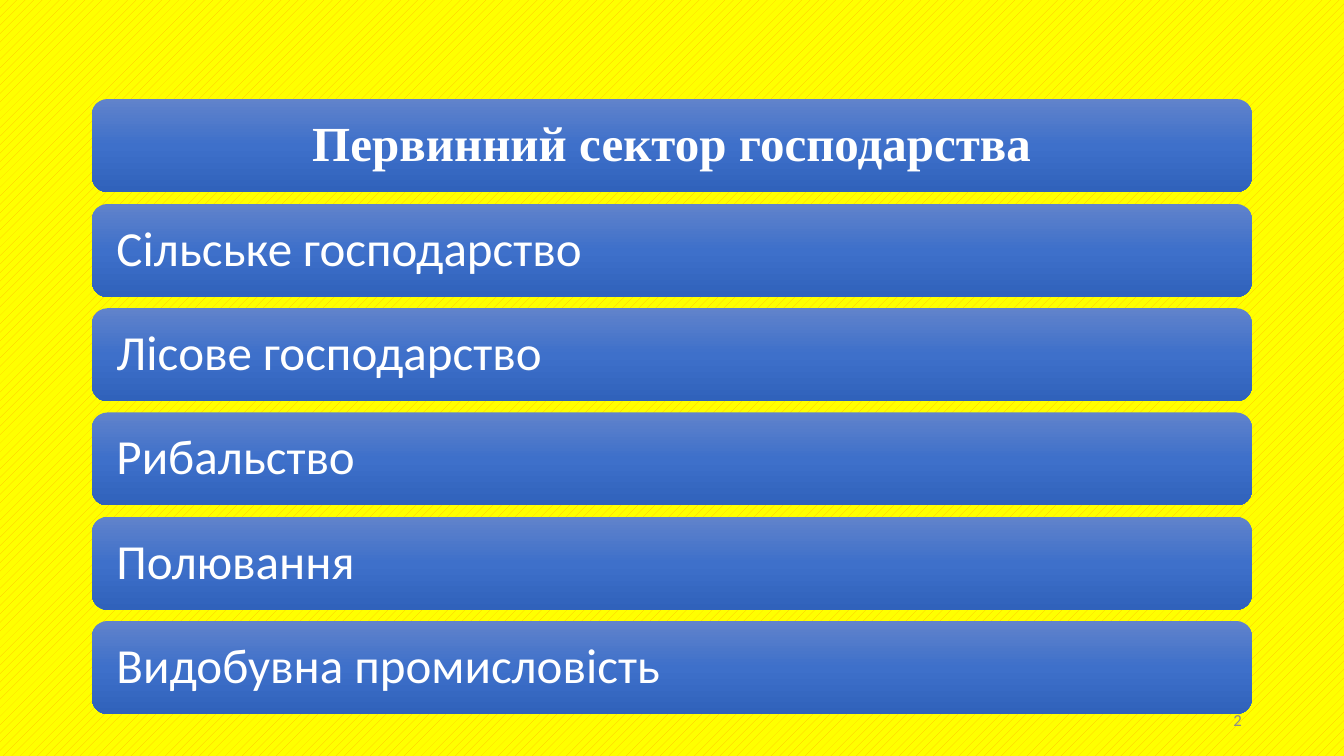
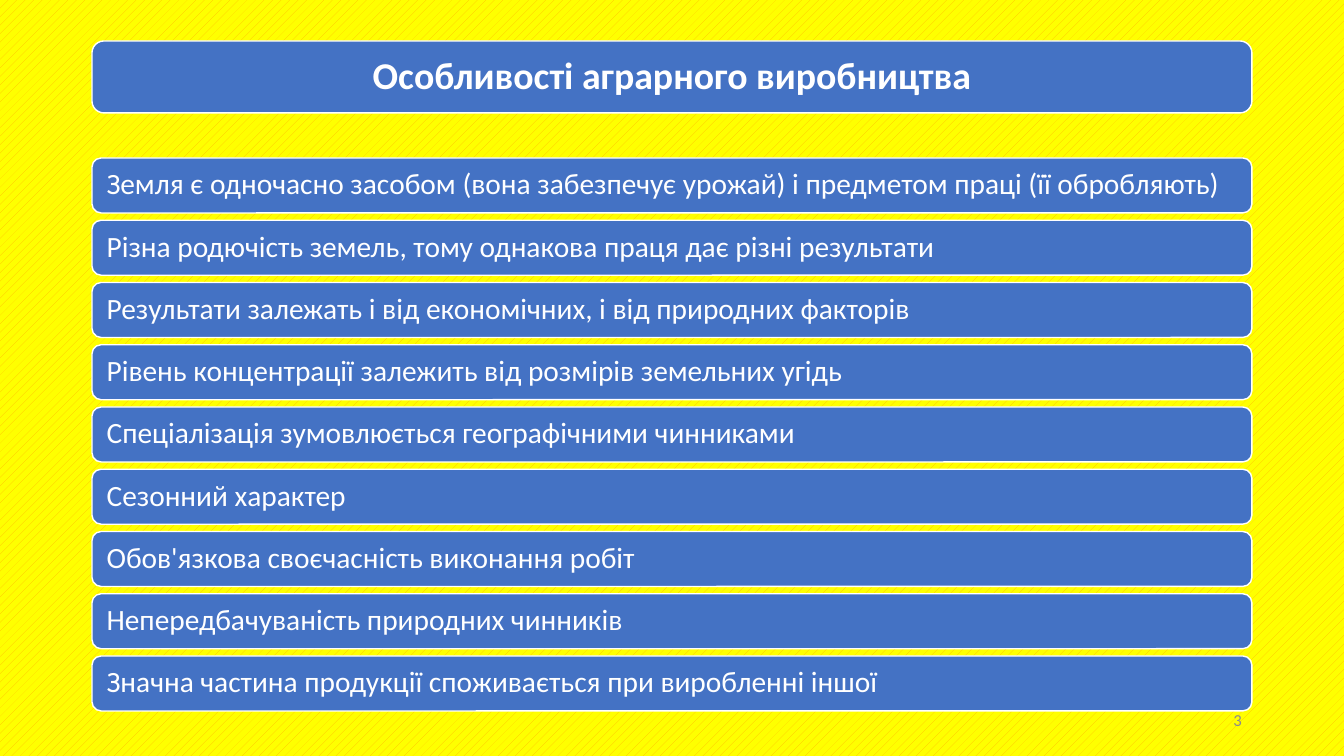
from copy import deepcopy

from pptx import Presentation
from pptx import util as u
from pptx.dml.color import RGBColor
from pptx.enum import dml, shapes, text
from pptx.oxml.ns import qn

SLIDE_W, SLIDE_H = 1344, 756
EMU_PER_PX = 12192000 / SLIDE_W
BAR_LEFT, BAR_W = 92, 1160
WHITE, GREY, BLUE = "FFFFFF", "8C8C8C", "4472C4"
GLOSS = [(0, "6183CB"), (0.5, "3E70CA"), (1, "3062BB")]
STRIPES = {"fore_color": "FFC000", "back_color": "FFFF00"}

SECTORS = [
    "Сільське господарство",
    "Лісове господарство",
    "Рибальство",
    "Полювання",
    "Видобувна промисловість",
]
FEATURES = [
    "Земля є одночасно засобом (вона забезпечує урожай) і предметом праці (її обробляють)",
    "Різна родючість земель, тому однакова праця дає різні результати",
    "Результати залежать і від економічних, і від природних факторів",
    "Рівень концентрації залежить від розмірів земельних угідь",
    "Спеціалізація зумовлюється географічними чинниками",
    "Сезонний характер",
    "Обов'язкова своєчасність виконання робіт",
    "Непередбачуваність природних чинників",
    "Значна частина продукції споживається при виробленні іншої",
]


def px(length):
    return u.Emu(round(length * EMU_PER_PX))


def rgb(hex_color):
    return RGBColor.from_string(hex_color)


def apply(target, formats):
    for name, value in formats.items():
        setattr(target, name, value)


def paint_background(master):
    fill = master.background.fill
    fill.patterned()
    fill.pattern = dml.MSO_PATTERN.DASHED_UPWARD_DIAGONAL
    for part, color in STRIPES.items():
        getattr(fill, part).rgb = rgb(color)


def paint_gloss(bar):
    bar.fill.gradient()
    bar.fill.gradient_angle = 270
    stop_list = bar.element.spPr.find(".//" + qn("a:gsLst"))
    stop_list.insert(1, deepcopy(stop_list[0]))
    for stop, (position, color) in zip(bar.fill.gradient_stops, GLOSS):
        stop.position = position
        stop.color.rgb = rgb(color)
    bar.line.fill.background()


def paint_flat(bar):
    bar.fill.solid()
    bar.fill.fore_color.rgb = rgb(BLUE)
    bar.line.color.rgb = rgb(WHITE)
    bar.line.width = u.Pt(1)


def add_bar(slide, top, height, paint):
    bar = slide.shapes.add_shape(
        shapes.MSO_SHAPE.ROUNDED_RECTANGLE,
        px(BAR_LEFT), px(top), px(BAR_W), px(height))
    bar.shadow.inherit = False
    paint(bar)
    return bar


def write(holder, wording, size, align, inset=10, color=WHITE, bold=False, font="Calibri"):
    frame = holder.text_frame
    frame.text = wording
    apply(frame, {
        "word_wrap": True,
        "auto_size": text.MSO_AUTO_SIZE.NONE,
        "vertical_anchor": text.MSO_ANCHOR.MIDDLE,
        "margin_left": px(inset), "margin_right": px(inset),
        "margin_top": 0, "margin_bottom": 0,
    })
    paragraph = frame.paragraphs[0]
    apply(paragraph, {"alignment": align, "line_spacing": 0.9})
    apply(paragraph.font, {"name": font, "size": u.Pt(size), "bold": bold})
    paragraph.font.color.rgb = rgb(color)


def add_heading(slide, wording, top, height, paint, size, font="Calibri"):
    title = slide.shapes.title
    bar = add_bar(slide, top, height, paint)
    title.element.addprevious(bar.element)
    apply(title, {"left": bar.left, "top": bar.top, "width": bar.width, "height": bar.height})
    write(title, wording, size, text.PP_ALIGN.CENTER, bold=True, font=font)


def add_rows(slide, wordings, top, bottom, height, paint, size, inset):
    pitch = (bottom - height - top) / (len(wordings) - 1)
    for index, wording in enumerate(wordings):
        row = add_bar(slide, top + index * pitch, height, paint)
        write(row, wording, size, text.PP_ALIGN.LEFT, inset)


def add_page_number(slide, number):
    page = slide.shapes.add_textbox(px(950), px(701), px(302), px(40))
    write(page, str(number), 12, text.PP_ALIGN.RIGHT, color=GREY)


def add_slide(deck, number):
    slide = deck.slides.add_slide(deck.slide_layouts.get_by_name("Title Only"))
    return slide, number


def main():
    deck = Presentation()
    apply(deck, {"slide_width": px(SLIDE_W), "slide_height": px(SLIDE_H)})
    paint_background(deck.slide_master)
    title_only = deck.slide_layouts.get_by_name("Title Only")

    sectors = deck.slides.add_slide(title_only)
    add_heading(sectors, "Первинний сектор господарства", 99, 93, paint_gloss, 35, "Times New Roman")
    add_rows(sectors, SECTORS, 204, 714, 93, paint_gloss, 35, 20)

    features = deck.slides.add_slide(title_only)
    add_heading(features, "Особливості аграрного виробництва", 41, 72, paint_flat, 27)
    add_rows(features, FEATURES, 158, 711, 55, paint_flat, 21, 12)

    for number, slide in enumerate(deck.slides, start=2):
        add_page_number(slide, number)
    deck.save("out.pptx")


if __name__ == "__main__":
    main()
